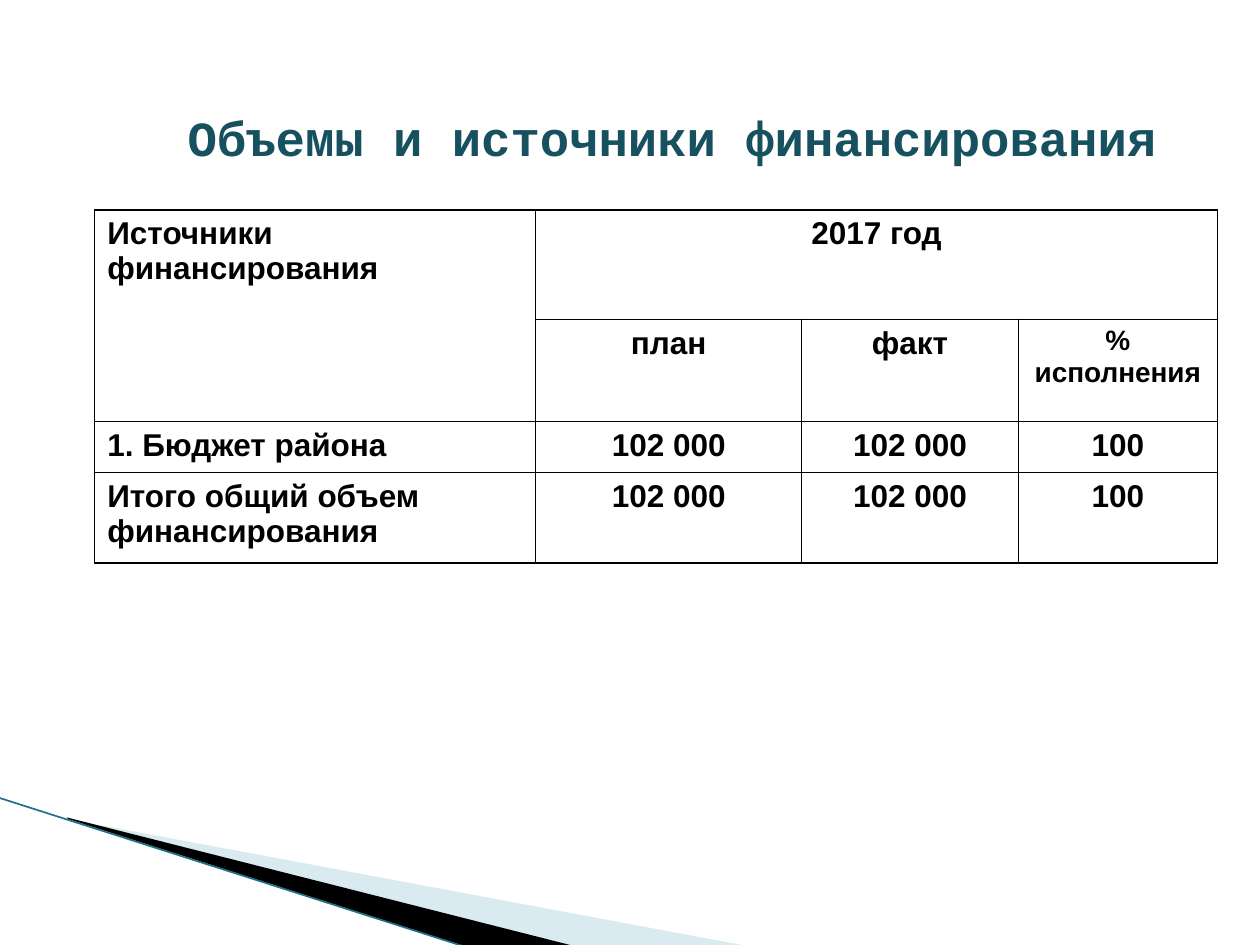
from lxml.etree import SubElement
from pptx import Presentation
from pptx.dml.color import RGBColor
from pptx.enum.shapes import MSO_CONNECTOR
from pptx.enum.text import MSO_ANCHOR, PP_ALIGN
from pptx.oxml.ns import qn
from pptx.util import Cm, Pt

COLORS = {"title": "175160", "text": "000000", "border": "000000",
          "pale": "A0CBDC", "dark": "000000", "edge": "1F7185"}
COLS = [8.89, 5.36, 4.37, 4.01]
ROWS = [2.21, 2.06, 1.03, 1.82]
CELLS = [
    ["Источники\nфинансирования", "2017 год", None, None],
    [None, "план", "факт", "%\nисполнения"],
    ["1. Бюджет района", "102 000", "102 000", "100"],
    ["Итого общий объем\nфинансирования", "102 000", "102 000", "100"],
]


def rgb(name):
    return RGBColor.from_string(COLORS[name])


def write(tf, text, size=18, font="Arial", color="text",
          align=PP_ALIGN.LEFT, hanging=0):
    for i, line in enumerate(text.split("\n")):
        p = tf.paragraphs[0] if i == 0 else tf.add_paragraph()
        p.alignment = align
        if hanging:
            pPr = p._p.get_or_add_pPr()
            pPr.set("marL", str(Cm(hanging)))
            pPr.set("indent", str(-Cm(hanging)))
        r = p.add_run()
        r.text = line
        r.font.size, r.font.name, r.font.bold = Pt(size), font, True
        r.font.color.rgb = rgb(color)


def set_frame(sp, frame):
    left, top, width, height = [Cm(v) for v in frame]
    dx, dy = sp.left - left, sp.top - top
    sp.left, sp.top, sp.width, sp.height = left, top, width, height
    for outline in sp._element.iter(qn("a:path")):
        outline.set("w", str(width))
        outline.set("h", str(height))
        for pt in outline.iter(qn("a:pt")):
            pt.set("x", str(int(pt.get("x")) + dx))
            pt.set("y", str(int(pt.get("y")) + dy))


def add_wedge(s, points, frame, color, alpha=100):
    start, *rest = [(Cm(x), Cm(y)) for x, y in points]
    builder = s.shapes.build_freeform(*start)
    builder.add_line_segments(rest, close=True)
    sp = builder.convert_to_shape()
    set_frame(sp, frame)
    sp.shadow.inherit = False
    sp.fill.solid()
    sp.fill.fore_color.rgb = rgb(color)
    sp.line.fill.background()
    if alpha < 100:
        clr = sp._element.spPr.find(qn("a:solidFill"))[0]
        SubElement(clr, qn("a:alpha"), val=str(alpha * 1000))


def add_edge(s, x1, y1, x2, y2):
    line = s.shapes.add_connector(
        MSO_CONNECTOR.STRAIGHT, Cm(x1), Cm(y1), Cm(x2), Cm(y2))
    line.line.color.rgb = rgb("edge")
    line.line.width = Pt(0.95)
    SubElement(line._element.spPr, qn("a:effectLst"))


def add_title(s, text):
    sp = s.shapes.title
    sp.left, sp.top, sp.width, sp.height = Cm(2.97), Cm(1.9), Cm(21.16), Cm(1.7)
    tf = sp.text_frame
    tf.word_wrap = True
    tf.vertical_anchor = MSO_ANCHOR.MIDDLE
    write(tf, text, size=28, font="Courier New", color="title",
          align=PP_ALIGN.CENTER)


def set_borders(cell):
    tcPr = cell._tc.get_or_add_tcPr()
    for i, side in enumerate(("lnL", "lnR", "lnT", "lnB")):
        ln = tcPr.makeelement(qn(f"a:{side}"), {"w": str(Pt(1))})
        fill = SubElement(ln, qn("a:solidFill"))
        SubElement(fill, qn("a:srgbClr"), val=COLORS["border"])
        tcPr.insert(i, ln)


def add_funding_table(s):
    frame = s.shapes.add_table(len(ROWS), len(COLS), Cm(1.91), Cm(4.23),
                               Cm(sum(COLS)), Cm(sum(ROWS)))
    table = frame.table
    table.first_row = table.horz_banding = False
    for col, width in zip(table.columns, COLS):
        col.width = Cm(width)
    for row, height in zip(table.rows, ROWS):
        row.height = Cm(height)
    table.cell(0, 0).merge(table.cell(1, 0))
    table.cell(0, 1).merge(table.cell(0, 3))
    for i, values in enumerate(CELLS):
        for j, text in enumerate(values):
            cell = table.cell(i, j)
            cell.fill.background()
            set_borders(cell)
            if text:
                write(cell.text_frame, text, hanging=0.95,
                      size=16 if text.startswith("%") else 18,
                      align=PP_ALIGN.CENTER if j else PP_ALIGN.LEFT)


def main():
    prs = Presentation()
    prs.slide_width, prs.slide_height = Cm(25.4), Cm(19.05)
    s = prs.slides.add_slide(prs.slide_layouts[5])
    add_wedge(s, [(1.4, 16.52), (15.11, 19.08), (11.58, 19.08), (1.4, 16.51)],
              (1.98, 13.89, 10.57, 4.01), "pale", alpha=40)
    add_wedge(s, [(1.35, 16.48), (11.61, 19.08), (9.45, 19.1), (1.37, 16.51)],
              (-0.15, 16.08, 10.57, 2.34), "dark")
    add_edge(s, -0.03, 16.08, 9.42, 19.1)
    add_title(s, "Объемы и источники финансирования")
    add_funding_table(s)
    prs.save("out.pptx")


if __name__ == "__main__":
    main()
